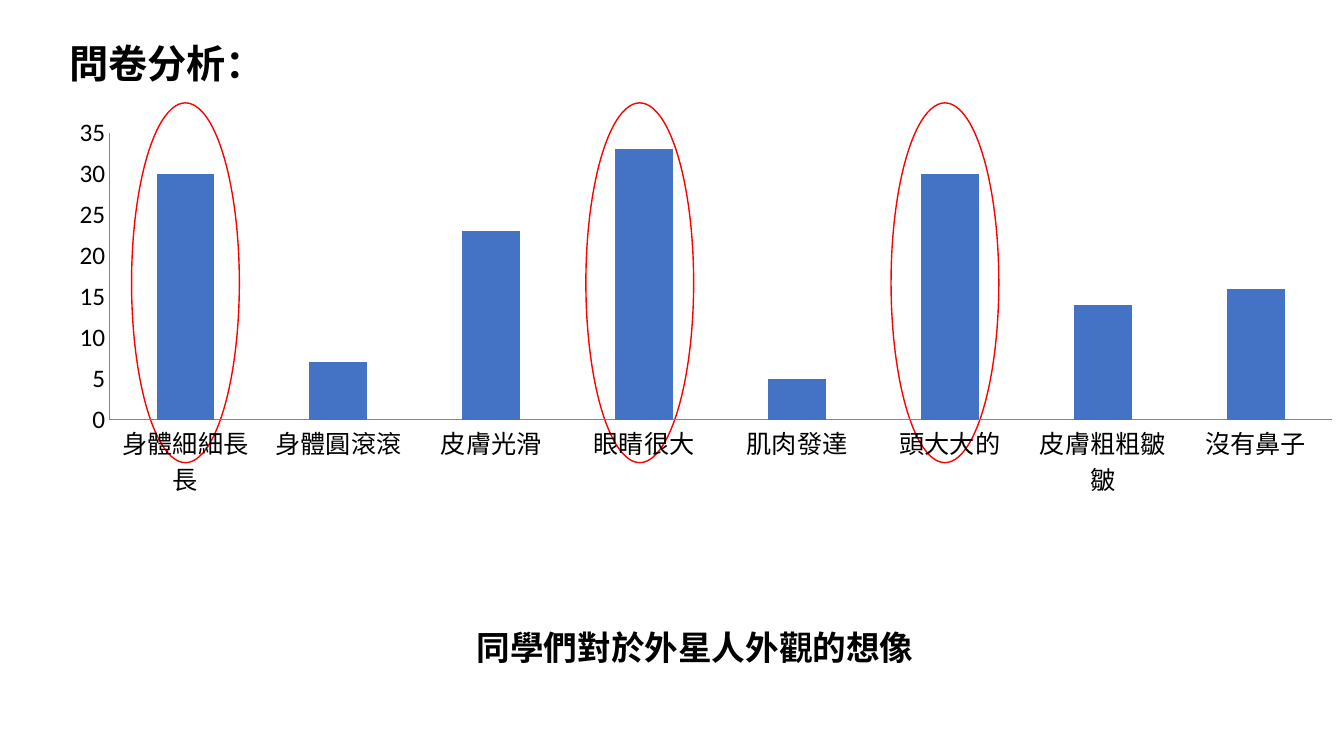
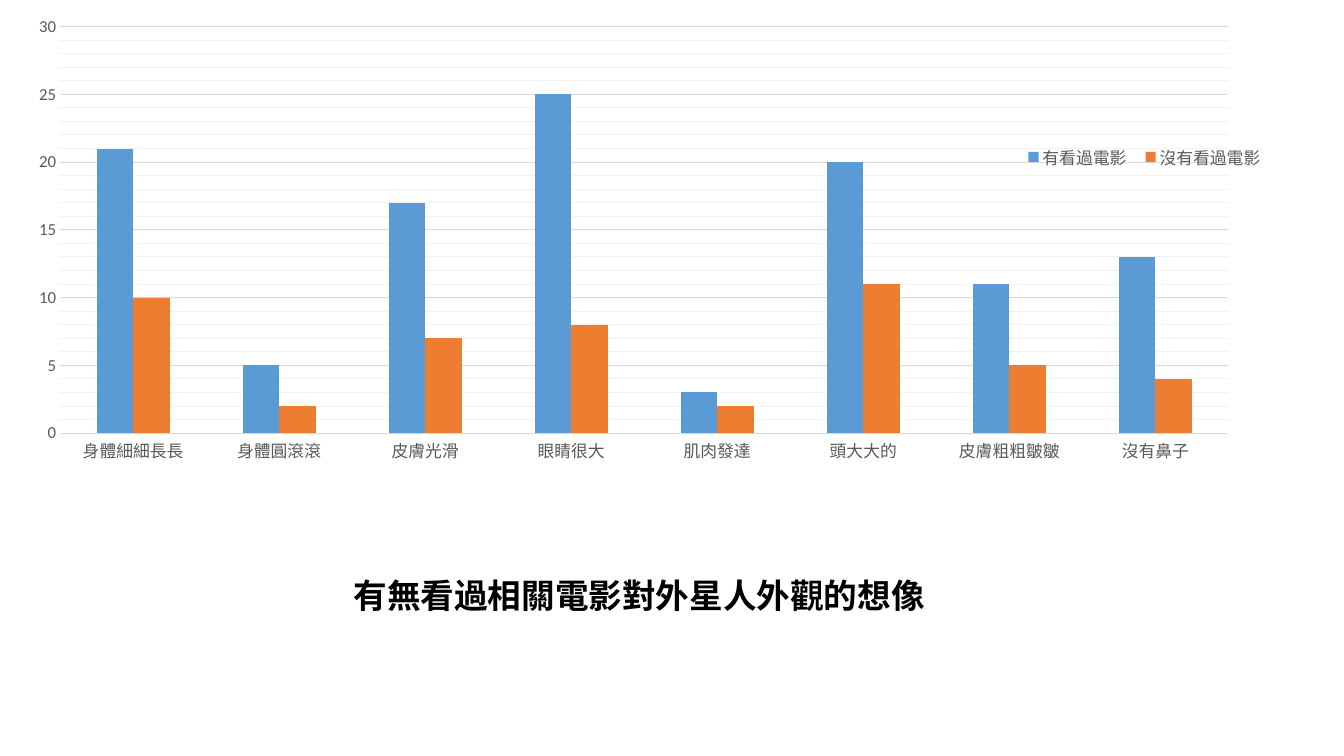
from lxml.etree import SubElement
from pptx import Presentation
from pptx.chart.data import CategoryChartData
from pptx.dml.color import RGBColor
from pptx.enum.chart import XL_CHART_TYPE, XL_LEGEND_POSITION, XL_TICK_MARK
from pptx.enum.shapes import MSO_SHAPE
from pptx.enum.text import MSO_AUTO_SIZE
from pptx.oxml import parse_xml
from pptx.oxml.ns import nsdecls, qn
from pptx.util import Pt

BLACK = RGBColor(0x00, 0x00, 0x00)
WHITE = RGBColor(0xFF, 0xFF, 0xFF)
RED = RGBColor(0xFF, 0x00, 0x00)
BAR_BLUE = RGBColor(0x44, 0x72, 0xC4)
LIGHT_BLUE = RGBColor(0x5B, 0x9B, 0xD5)
ORANGE = RGBColor(0xED, 0x7D, 0x31)
DARK_GRAY = RGBColor(0x59, 0x59, 0x59)
AXIS_GRAY = RGBColor(0x86, 0x86, 0x86)
GRID_GRAY = RGBColor(0xD9, 0xD9, 0xD9)
MINOR_GRAY = RGBColor(0xF2, 0xF2, 0xF2)

HEADING_FONT = "Noto Sans CJK SC"
CHART_FONT = "Calibri"
TITLE_FORMAT = {"name": HEADING_FONT, "size": Pt(28), "bold": True}
CAPTION_FORMAT = {"name": HEADING_FONT, "size": Pt(24), "bold": True}

CATEGORIES = ["身體細細長長", "身體圓滾滾", "皮膚光滑", "眼睛很大",
              "肌肉發達", "頭大大的", "皮膚粗粗皺皺", "沒有鼻子"]


def apply_format(target, values):
    for name, value in values.items():
        setattr(target, name, value)


def style_font(font, values, color):
    apply_format(font, values)
    font.color.rgb = color


def style_line(line, color, width=0.75):
    line.color.rgb = color
    line.width = Pt(width)


def add_text(slide, box, text, values, **paragraph_values):
    shape = slide.shapes.add_textbox(*map(Pt, box))
    frame = shape.text_frame
    frame.word_wrap = True
    paragraph = frame.paragraphs[0]
    apply_format(paragraph, paragraph_values)
    run = paragraph.add_run()
    run.text = text
    style_font(run.font, values, BLACK)
    east_asian = SubElement(run.font._element, qn("a:ea"))
    east_asian.set("typeface", values["name"])
    return shape


def add_caption(slide, box, text):
    shape = add_text(slide, box, text, CAPTION_FORMAT)
    shape.text_frame.auto_size = MSO_AUTO_SIZE.SHAPE_TO_FIT_TEXT


def add_highlight(slide, left):
    ellipse = slide.shapes.add_shape(
        MSO_SHAPE.OVAL, Pt(left), Pt(73.5), Pt(77), Pt(257))
    ellipse.shadow.inherit = False
    ellipse.fill.solid()
    ellipse.fill.fore_color.rgb = WHITE
    style_line(ellipse.line, RED, 1)


def make_layout(box, chart_box, inner=False):
    left, top, width, height = chart_box
    fractions = {"x": (box[0] - left) / width, "y": (box[1] - top) / height,
                 "w": box[2] / width, "h": box[3] / height}
    settings = {"layoutTarget": "inner"} if inner else {}
    settings.update({"xMode": "edge", "yMode": "edge"})
    settings.update({name: f"{value:.4f}" for name, value in fractions.items()})
    layout = parse_xml(f"<c:layout {nsdecls('c')}><c:manualLayout/></c:layout>")
    for name, value in settings.items():
        SubElement(layout[0], qn(f"c:{name}")).set("val", value)
    return layout


def remove_layout(element):
    for layout in element.findall(qn("c:layout")):
        element.remove(layout)


def no_fill():
    return parse_xml(f"<c:spPr {nsdecls('c', 'a')}><a:noFill/>"
                     "<a:ln><a:noFill/></a:ln></c:spPr>")


def style_minor_gridlines(axis, color):
    axis.has_minor_gridlines = True
    gridlines = axis._element.find(qn("c:minorGridlines"))
    gridlines.append(parse_xml(
        f"<c:spPr {nsdecls('c', 'a')}><a:ln w=\"{Pt(0.75)}\"><a:solidFill>"
        f"<a:srgbClr val=\"{color}\"/></a:solidFill></a:ln></c:spPr>"))


def add_column_chart(slide, box, plot_box, series, gap, overlap, size, color):
    data = CategoryChartData()
    data.categories = CATEGORIES
    for name, values, _ in series:
        data.add_series(name, values)
    chart = slide.shapes.add_chart(
        XL_CHART_TYPE.COLUMN_CLUSTERED, *map(Pt, box), data).chart
    apply_format(chart, {"has_title": False, "has_legend": False})
    style_font(chart.font, {"name": CHART_FONT, "size": Pt(size)}, color)

    plot = chart.plots[0]
    apply_format(plot, {"gap_width": gap, "overlap": overlap,
                        "vary_by_categories": False})
    for bars, (_, _, fill_color) in zip(plot.series, series):
        bars.format.fill.solid()
        bars.format.fill.fore_color.rgb = fill_color

    for axis in (chart.category_axis, chart.value_axis):
        apply_format(axis, {"major_tick_mark": XL_TICK_MARK.NONE,
                            "minor_tick_mark": XL_TICK_MARK.NONE,
                            "has_major_gridlines": False})

    chart_space = chart._chartSpace
    chart_space.find(qn("c:chart")).addnext(no_fill())
    plot_area = chart_space.find(qn("c:chart")).find(qn("c:plotArea"))
    remove_layout(plot_area)
    plot_area.insert(0, make_layout(plot_box, box, inner=True))
    plot_area.append(no_fill())
    return chart


def add_legend(chart, box, chart_box):
    chart.has_legend = True
    legend = chart.legend
    apply_format(legend, {"position": XL_LEGEND_POSITION.TOP,
                          "include_in_layout": False})
    style_font(legend.font, {"name": CHART_FONT, "size": Pt(12)}, DARK_GRAY)
    element = legend._element
    remove_layout(element)
    element.find(qn("c:legendPos")).addnext(make_layout(box, chart_box))


def build_overall_slide(slide):
    for left in (94, 418.5, 636.5):
        add_highlight(slide, left)
    add_text(slide, (42.5, 28, 828, 474), "問卷分析：", TITLE_FORMAT,
             line_spacing=0.9, space_before=Pt(10))
    series = [("Series 1", (30, 7, 23, 33, 5, 30, 14, 16), BAR_BLUE)]
    chart = add_column_chart(slide, (0, 83.5, 952, 333.5), (78, 95, 874, 205),
                             series, 164, -22, 18, BLACK)
    apply_format(chart.value_axis, {"minimum_scale": 0, "maximum_scale": 35,
                                    "major_unit": 5})
    for axis in (chart.category_axis, chart.value_axis):
        style_line(axis.format.line, AXIS_GRAY)
    add_caption(slide, (333.5, 444, 357, 36), "同學們對於外星人外觀的想像")


def build_movie_slide(slide):
    chart_box = (-34, 0, 980.5, 373)
    series = [("有看過電影", (21, 5, 17, 25, 3, 20, 11, 13), LIGHT_BLUE),
              ("沒有看過電影", (10, 2, 7, 8, 2, 11, 5, 4), ORANGE)]
    chart = add_column_chart(slide, chart_box, (43, 19, 834.5, 290.5),
                             series, 199, 0, 12, DARK_GRAY)
    axis = chart.value_axis
    apply_format(axis, {"minimum_scale": 0, "maximum_scale": 30,
                        "major_unit": 5, "minor_unit": 1,
                        "has_major_gridlines": True})
    axis.format.line.fill.background()
    style_line(axis.major_gridlines.format.line, GRID_GRAY)
    style_minor_gridlines(axis, MINOR_GRAY)
    style_line(chart.category_axis.format.line, GRID_GRAY)
    add_legend(chart, (725, 101, 185, 22), chart_box)
    add_caption(slide, (245.5, 407, 426, 36), "有無看過相關電影對外星人外觀的想像")


def main():
    presentation = Presentation()
    apply_format(presentation, {"slide_width": Pt(960), "slide_height": Pt(540)})
    for build in (build_overall_slide, build_movie_slide):
        build(presentation.slides.add_slide(presentation.slide_layouts[6]))
    presentation.save("out.pptx")


if __name__ == "__main__":
    main()
